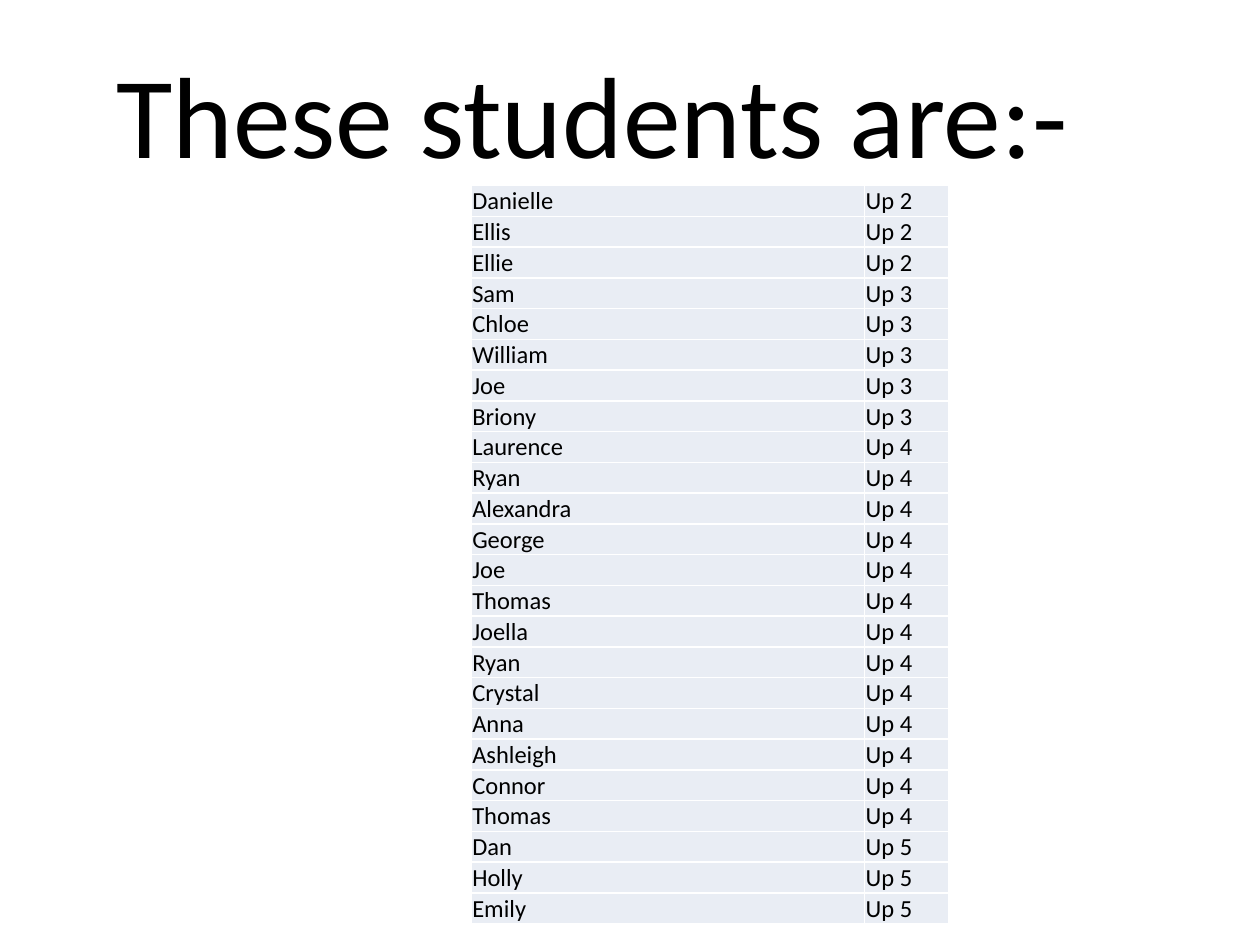
from dataclasses import dataclass

from pptx import Presentation
from pptx.dml.color import RGBColor
from pptx.enum.text import MSO_ANCHOR
from pptx.util import Cm, Pt


@dataclass(frozen=True)
class Theme:
    """Hold the colours, font and type sizes."""
    font: str = "Calibri"
    ink: str = "000000"
    fill: str = "E9EDF4"
    title: int = 66
    body: int = 14


THEME = Theme()
GROUPS = {
    "Up 2": ["Danielle", "Ellis", "Ellie"],
    "Up 3": ["Sam", "Chloe", "William", "Joe", "Briony"],
    "Up 4": ["Laurence", "Ryan", "Alexandra", "George", "Joe", "Thomas",
             "Joella", "Ryan", "Crystal", "Anna", "Ashleigh", "Connor",
             "Thomas"],
    "Up 5": ["Dan", "Holly", "Emily"],
}


def write(frame, text, size=THEME.body, color=THEME.ink, font=THEME.font):
    """Put formatted text in a frame."""
    run = frame.paragraphs[0].add_run()
    run.text = text
    run.font.size = Pt(size)
    run.font.name = font
    run.font.color.rgb = RGBColor.from_string(color)


def add_title(slide, text):
    """Add the title text box."""
    box = slide.shapes.add_textbox(Cm(2.1), Cm(0.74), Cm(21.8), Cm(5.9))
    box.text_frame.word_wrap = True
    write(box.text_frame, text, size=THEME.title)


def fill_cell(cell, text, anchor):
    """Fill one table cell and set its margins."""
    cell.fill.solid()
    cell.fill.fore_color.rgb = RGBColor.from_string(THEME.fill)
    cell.margin_left = cell.margin_right = cell.margin_top = Cm(0.02)
    cell.margin_bottom = Cm(0)
    cell.vertical_anchor = anchor
    write(cell.text_frame, text)


def add_list(slide, groups):
    """Add the table of students and their levels."""
    rows = [(name, level) for level, names in groups.items() for name in names]
    widths = [Cm(7.93), Cm(1.7)]
    high = Cm(0.62)
    table = slide.shapes.add_table(
        len(rows), len(widths), Cm(9.5), Cm(3.74),
        sum(widths), high * len(rows)).table
    table.first_row = table.horz_banding = False
    for col, width in zip(table.columns, widths):
        col.width = width
    for line, (name, level) in zip(table.rows, rows):
        line.height = high
        fill_cell(line.cells[0], name, MSO_ANCHOR.BOTTOM)
        fill_cell(line.cells[1], level, MSO_ANCHOR.TOP)


def main():
    """Build and save the slide."""
    deck = Presentation()
    deck.slide_width, deck.slide_height = Cm(25.4), Cm(19.05)
    slide = deck.slides.add_slide(deck.slide_layouts[6])
    add_title(slide, "These students are:-")
    add_list(slide, GROUPS)
    deck.save("out.pptx")


if __name__ == "__main__":
    main()
